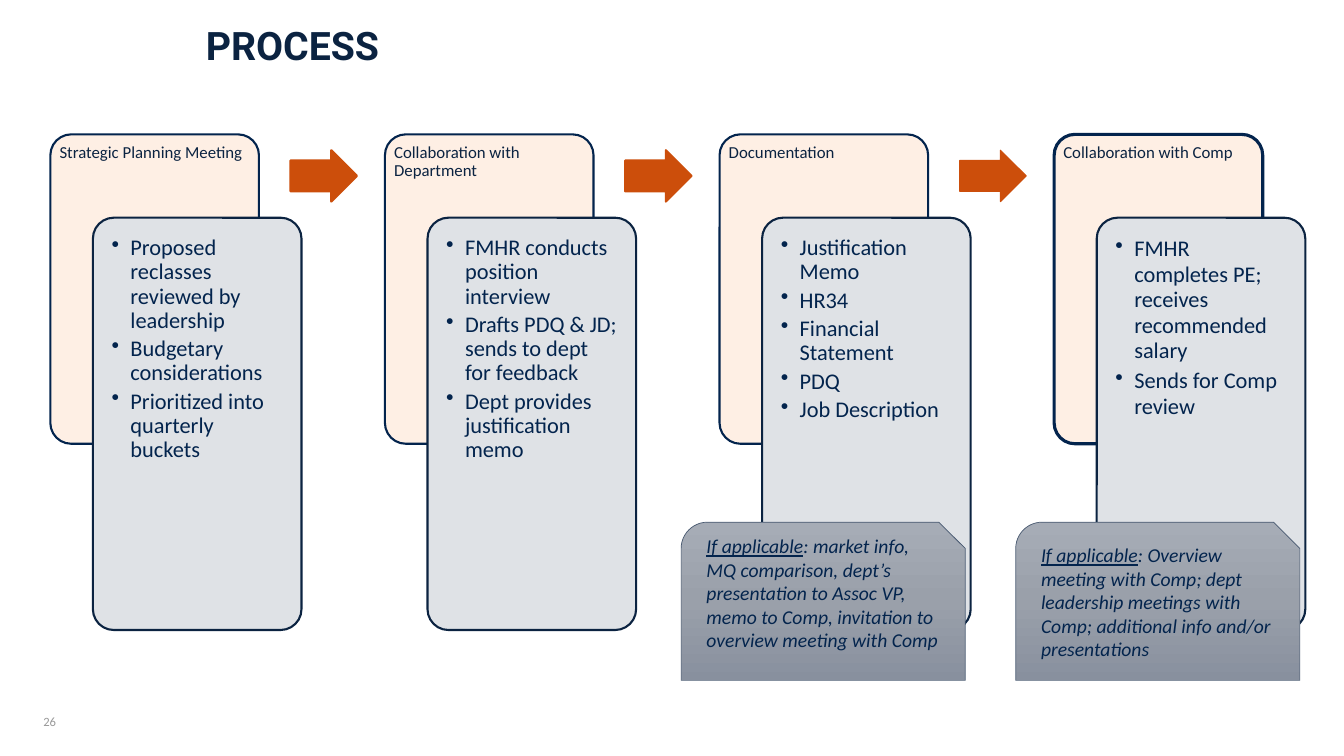
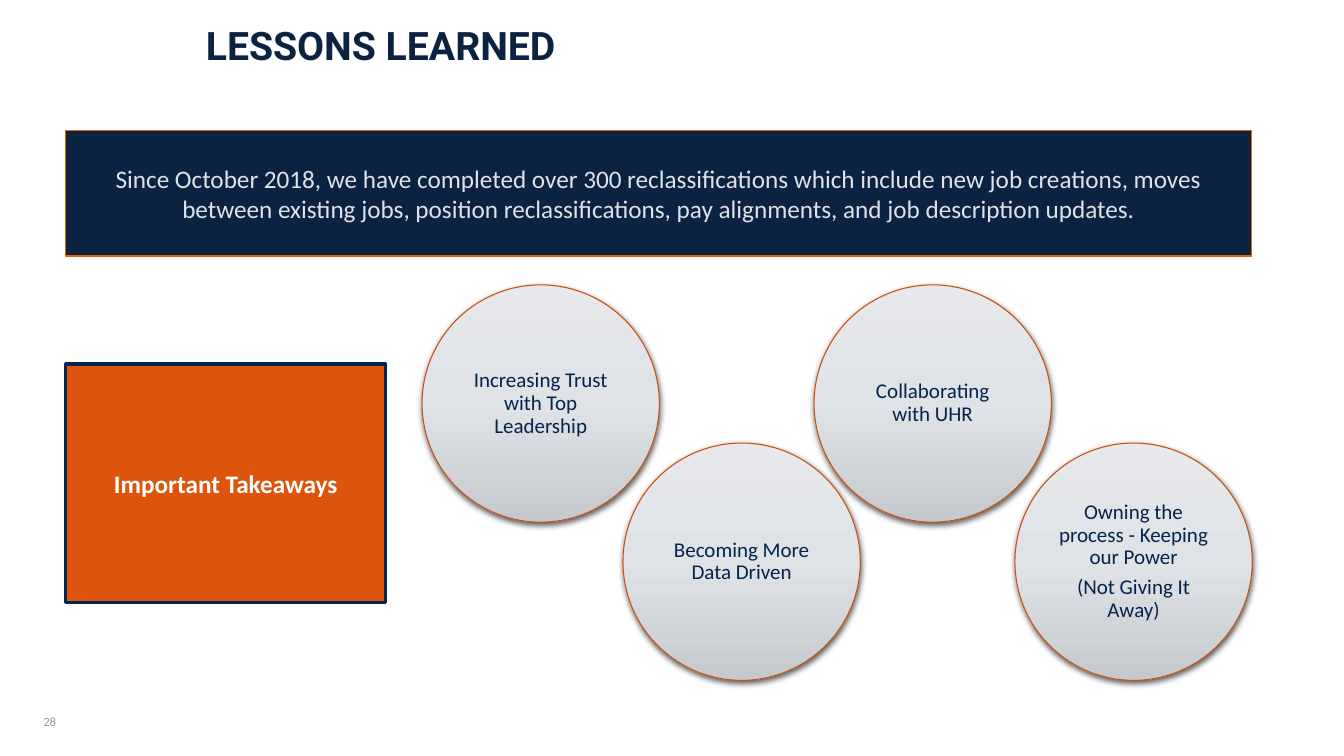
"""Build the two slides on the reclassification process and its lessons."""
from copy import deepcopy

from lxml import etree
from pptx import Presentation
from pptx.dml.color import RGBColor
from pptx.enum import shapes, text
from pptx.oxml import ns
from pptx.util import Pt

NAVY = RGBColor(0x0B, 0x23, 0x41)
BLUE = RGBColor(0x03, 0x24, 0x4D)
CREAM = RGBColor(0xFE, 0xEF, 0xE4)
MIST = RGBColor(0xDF, 0xE2, 0xE6)
RUST = RGBColor(0xCC, 0x4E, 0x0B)
ORANGE = RGBColor(0xDD, 0x55, 0x0C)
FLAME = RGBColor(0xE8, 0x61, 0x00)
SLATE = RGBColor(0x48, 0x59, 0x70)
GRAY = RGBColor(0x99, 0x99, 0x99)
WHITE = RGBColor(0xFF, 0xFF, 0xFF)
STEEL = [RGBColor(0xA6, 0xAC, 0xB6), RGBColor(0x9A, 0xA0, 0xAA), RGBColor(0x88, 0x90, 0x9E)]
PEARL = [RGBColor(0xE6, 0xE8, 0xEB), MIST, RGBColor(0xC5, 0xC9, 0xCD)]
FORM = shapes.MSO_SHAPE
TOP, MID = text.MSO_ANCHOR.TOP, text.MSO_ANCHOR.MIDDLE
LEFT, CENTER = text.PP_ALIGN.LEFT, text.PP_ALIGN.CENTER


def draw(slide, kind, box, fill, line, width):
    """Add a preset shape; a list of colours gives a downward gradient."""
    shape = slide.shapes.add_shape(kind, *map(Pt, box))
    shape.shadow.inherit = False
    shape.line.color.rgb = line
    shape.line.width = Pt(width)
    if isinstance(fill, list):
        shape.fill.gradient()
        shape.fill.gradient_angle = 270
        first = shape.element.spPr.find(".//" + ns.qn("a:gs"))
        first.addnext(deepcopy(first))
        for stop, color, place in zip(shape.fill.gradient_stops, fill, (0, 0.5, 1)):
            stop.color.rgb = color
            stop.position = place
    else:
        shape.fill.solid()
        shape.fill.fore_color.rgb = fill
    return shape


def style(shape, size, color, font="Calibri", bold=False, italic=False, align=LEFT,
          anchor=TOP, space=1.0, after=0, inset=None, bullet=False):
    """Format all the text that a shape holds."""
    frame = shape.text_frame
    frame.word_wrap = True
    frame.vertical_anchor = anchor
    if inset is not None:
        frame.margin_left = frame.margin_right = Pt(inset)
        frame.margin_top = frame.margin_bottom = Pt(inset)
    for para in frame.paragraphs:
        if bullet:
            props = para._p.get_or_add_pPr()
            props.set("marL", str(Pt(13.5)))
            props.set("indent", str(-Pt(13.5)))
            etree.SubElement(props, ns.qn("a:buChar")).set("char", "•")
        para.alignment = align
        para.line_spacing = space
        para.space_after = Pt(after)
        for run in para.runs:
            run.font.name = font
            run.font.size = Pt(size)
            run.font.color.rgb = color
            run.font.bold = bold
            run.font.italic = italic


deck = Presentation()
deck.slide_width, deck.slide_height = Pt(960), Pt(540)
pages = []
for title, number in (("PROCESS", "26"), ("LESSONS LEARNED", "28")):
    page = deck.slides.add_slide(deck.slide_layouts[6])
    folio = page.shapes.add_textbox(Pt(23.8), Pt(501), Pt(25.2), Pt(29))
    folio.text_frame.text = number
    style(folio, 9, GRAY, anchor=MID)
    head = page.shapes.add_textbox(Pt(140), Pt(18), Pt(787), Pt(52.5))
    head.text_frame.text = title
    style(head, 28, NAVY, font="Roboto", bold=True, space=0.8)
    pages.append(page)
process, lessons = pages

STEPS = [
    ("Strategic Planning Meeting", 1.5, 0.9,
     ["Proposed reclasses reviewed by leadership", "Budgetary considerations",
      "Prioritized into quarterly buckets"]),
    ("Collaboration with Department", 1.5, 0.9,
     ["FMHR conducts position interview", "Drafts PDQ & JD; sends to dept for feedback",
      "Dept provides justification memo"]),
    ("Documentation", 1.5, 0.9,
     ["Justification Memo", "HR34", "Financial Statement", "PDQ", "Job Description"]),
    ("Collaboration with Comp", 2.25, 0.95,
     ["FMHR completes PE; receives recommended salary", "Sends for Comp review"]),
]
PITCH = 239
for i, (label, width, space, points) in enumerate(STEPS):
    left = 36 + i * PITCH
    card = draw(process, FORM.ROUNDED_RECTANGLE, (left, 96, 149, 221), CREAM, BLUE, width)
    card.adjustments[0] = 0.1
    card.text_frame.text = label
    style(card, 12, NAVY, space=0.9, inset=2.2)
    panel = draw(process, FORM.ROUNDED_RECTANGLE, (left + 30.4, 155.5, 149, 294.5), MIST, NAVY, 1.5)
    panel.adjustments[0] = 0.1
    panel.text_frame.text = "\n".join(points)
    style(panel, 16, BLUE, space=space, after=3, inset=9, bullet=True)
    if i < len(STEPS) - 1:
        edge = 0.75 if i == len(STEPS) - 2 else 1.5
        arrow = draw(process, FORM.RIGHT_ARROW, (left + 171.5, 107.3, 47.5, 36.7), RUST, RUST, edge)
        arrow.adjustments[0] = 0.6

NOTES = [
    (378, ": market info, MQ comparison, dept’s presentation to Assoc VP, "
          "memo to Comp, invitation to overview meeting with Comp"),
    (384.5, ": Overview meeting with Comp; dept leadership meetings with Comp; "
            "additional info and/or presentations"),
]
for i, (top, rest) in enumerate(NOTES):
    left = 486.5 + i * PITCH
    draw(process, FORM.SNIP_ROUND_RECTANGLE, (left, 373, 203, 113), STEEL, SLATE, 0.5)
    note = process.shapes.add_textbox(Pt(left + 11), Pt(top), Pt(181.5), Pt(100))
    para = note.text_frame.paragraphs[0]
    para.text = "If applicable"
    para.runs[0].font.underline = True
    para.add_run().text = rest
    style(note, 14, BLUE, italic=True)

banner = draw(lessons, FORM.RECTANGLE, (47, 93, 847, 90), NAVY, FLAME, 1)
banner.text_frame.text = (
    "Since October 2018, we have completed over 300 reclassifications which include "
    "new job creations, moves between existing jobs, position reclassifications, "
    "pay alignments, and job description updates.")
style(banner, 18, MIST, align=CENTER, anchor=MID)
lead = draw(lessons, FORM.RECTANGLE, (47, 260, 228.5, 170.5), ORANGE, BLUE, 2.25)
lead.text_frame.text = "Important Takeaways"
style(lead, 18, WHITE, bold=True, align=CENTER, anchor=MID)

GAINS = ["Increasing Trust with Top Leadership", "Becoming More Data Driven",
         "Collaborating with UHR",
         "Owning the process - Keeping our Power\n(Not Giving It Away)"]
for i, gain in enumerate(GAINS):
    pair, low = divmod(i, 2)
    box = (301.5 + pair * 280 + low * 143.5, 203.5 + low * 113, 169.5, 169.5)
    disc = draw(lessons, FORM.OVAL, box, PEARL, RUST, 0.75)
    glow = etree.SubElement(
        disc.element.spPr.find(ns.qn("a:effectLst")), ns.qn("a:outerShdw"),
        blurRad=str(Pt(4.5)), dist=str(Pt(1.5)), dir="5400000", rotWithShape="0")
    tint = etree.SubElement(glow, ns.qn("a:srgbClr"), val="000000")
    etree.SubElement(tint, ns.qn("a:alpha"), val="63000")
    disc.text_frame.text = gain
    style(disc, 15, BLUE, align=CENTER, anchor=MID, space=0.9, after=5.25, inset=4.5)

deck.save("out.pptx")
